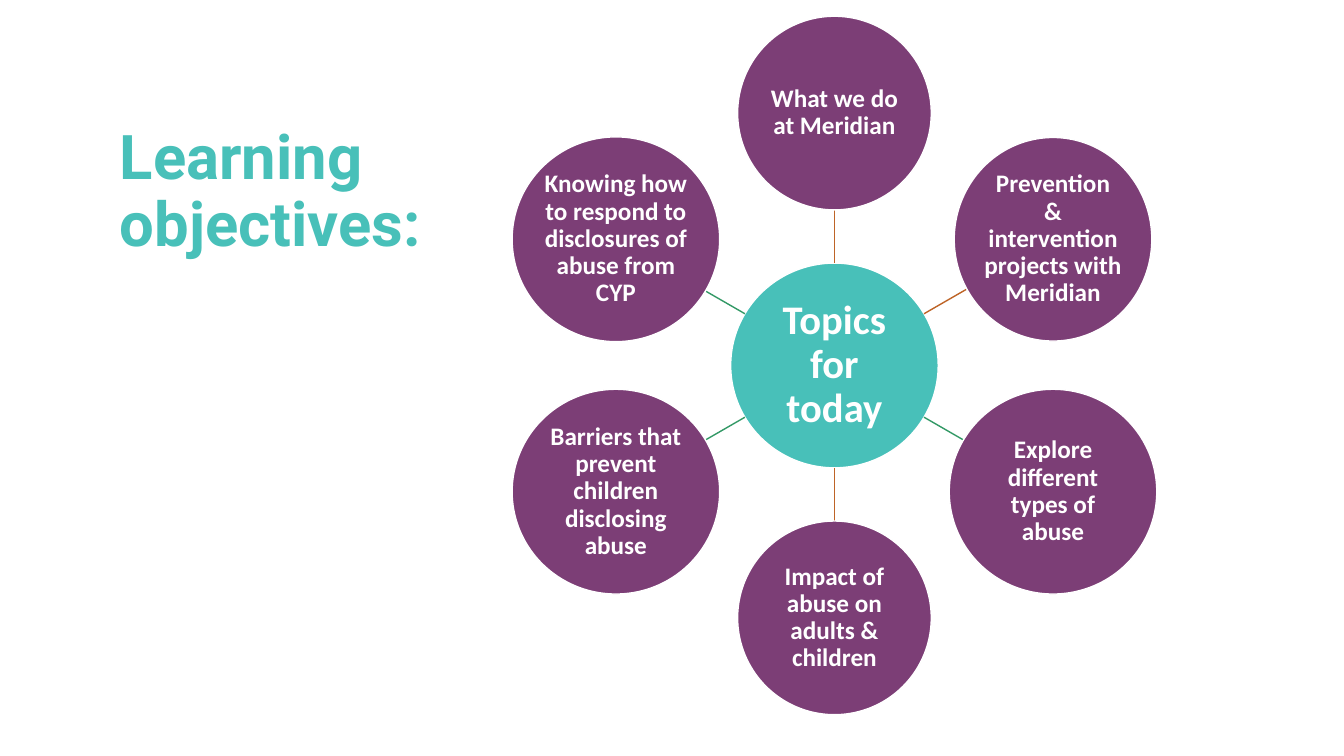
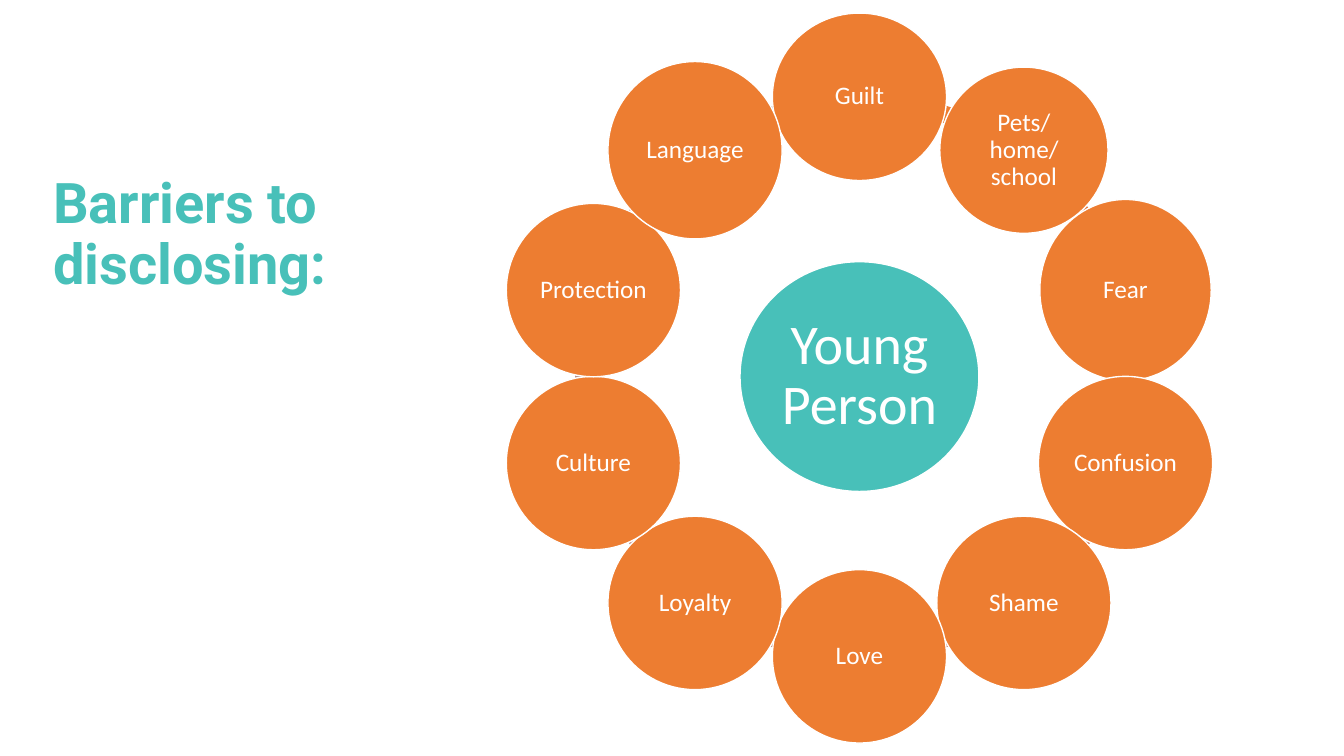
import math
import pptx
import pptx.util
import pptx.oxml.ns
import pptx.dml.color
import pptx.enum.shapes
import pptx.enum.text
import lxml.etree

Cm, Pt = pptx.util.Cm, pptx.util.Pt
RGB = pptx.dml.color.RGBColor
KIND = pptx.enum.shapes.MSO_SHAPE
ALIGN = pptx.enum.text.PP_ALIGN
ANCHOR = pptx.enum.text.MSO_ANCHOR

TEAL = RGB(0x48, 0xC0, 0xB9)
PLUM = RGB(0x7C, 0x3E, 0x76)
ORANGE = RGB(0xED, 0x7D, 0x31)
RUST = RGB(0xBE, 0x64, 0x27)
GREEN = RGB(0x33, 0x99, 0x66)
WHITE = RGB(0xFF, 0xFF, 0xFF)

# Content: satellites run clockwise from the top; lengths are in cm
SMALL, LARGE, PLAIN = (4.88, 4.88), (5.23, 5.16), (4.39, 4.37)

TOPICS = {
    "title": ("Learning\vobjectives:", (2.77, 3.07, 9.9, 5.92), 44),
    "mid": (21.03, 9.21), "reach": 6.36, "fill": PLUM, "bold": True, "pad": 0.03,
    "hub": ("Topics for today", LARGE, 29, 0.05),
    "nodes": [
        ("What we do at Meridian", SMALL),
        ("Prevention & intervention projects with Meridian", (4.98, 5.13)),
        ("Explore different types of abuse", LARGE),
        ("Impact of abuse on adults & children", SMALL),
        ("Barriers that prevent children disclosing abuse", LARGE),
        ("Knowing how to respond to disclosures of abuse from CYP", LARGE),
    ],
    "spokes": [RUST, RUST, GREEN, RUST, GREEN, GREEN],
}
BARRIERS = {
    "title": ("Barriers to disclosing:", (1.09, 4.29, 11.66, 9.14), 40),
    "mid": (21.66, 9.49), "reach": 7.05, "fill": ORANGE, "bold": False, "pad": 0.08,
    "hub": ("Young Person", (6.02, 5.79), 40, 0.15),
    "nodes": [
        ("Guilt", (4.39, 4.22)),
        ("Pets/home/school", (4.24, 4.19)),
        ("Fear", (4.32, 4.57)),
        ("Confusion", PLAIN),
        ("Shame", PLAIN),
        ("Love", PLAIN),
        ("Loyalty", PLAIN),
        ("Culture", PLAIN),
        ("Protection", PLAIN),
        ("Language", (4.39, 4.47)),
    ],
    # Ring segments, counter-clockwise, from the one that ends at the top
    "ring": ["A5A5A5", "AB9B9A", "B2928E", "B98A82", "C08376",
             "C87F69", "D17B5C", "DA7A4E", "E37A40", "ED7D31"],
}
RING = 14.33


def write(shape, text, size=18, font="Calibri", color=WHITE, bold=False,
          align=ALIGN.CENTER, anchor=ANCHOR.MIDDLE, pad=None):
    frame = shape.text_frame
    frame.word_wrap = True
    frame.vertical_anchor = anchor
    if pad is not None:
        frame.margin_left = frame.margin_right = Cm(pad)
        frame.margin_top = frame.margin_bottom = Cm(pad)
    frame.text = text
    para = frame.paragraphs[0]
    para.alignment = align
    para.line_spacing = 0.9
    for run in para.runs:
        run.font.name, run.font.size = font, Pt(size)
        run.font.bold, run.font.color.rgb = bold, color


def place(slide, kind, mid, dims, fill):
    """Add a filled shape centred on mid."""
    left, top = (m - d / 2 for m, d in zip(mid, dims))
    shape = slide.shapes.add_shape(kind, Cm(left), Cm(top), Cm(dims[0]), Cm(dims[1]))
    shape.shadow.inherit = False
    shape.fill.solid()
    shape.fill.fore_color.rgb = fill
    shape.line.fill.background()
    return shape


def disc(slide, mid, dims, fill, text, **style):
    shape = place(slide, KIND.OVAL, mid, dims, fill)
    shape.line.color.rgb = WHITE
    shape.line.width = Pt(1)
    write(shape, text, **style)


def edge(dims, ux, uy):
    """Distance from an ellipse's centre to its rim along (ux, uy)."""
    return 1 / math.hypot(2 * ux / dims[0], 2 * uy / dims[1])


def spoke(slide, start, end, color):
    line = slide.shapes.add_connector(
        pptx.enum.shapes.MSO_CONNECTOR.STRAIGHT, *(Cm(v) for v in start + end))
    line.line.color.rgb = color
    line.line.width = Pt(1)
    props = line._element.spPr
    lxml.etree.SubElement(props, pptx.oxml.ns.qn("a:effectLst"))


def wheel(deck, data):
    slide = deck.slides.add_slide(deck.slide_layouts[6])
    x, y = data["mid"]

    # Title
    text, box, size = data["title"]
    write(slide.shapes.add_textbox(*(Cm(v) for v in box)), text, size=size,
          font="Roboto", color=TEAL, bold=True, align=ALIGN.LEFT, anchor=ANCHOR.TOP)

    # Ring behind the discs; angle adjustments count 0.6 per degree
    ring = data.get("ring", [])
    for i, tint in enumerate(ring):
        step = 360 / len(ring)
        start = (270 - step * (i + 1)) % 360
        arc = place(slide, KIND.BLOCK_ARC, (x, y), (RING, RING), RGB.from_string(tint))
        for n, value in enumerate((start * 0.6, (start + step) % 360 * 0.6, 0.03)):
            arc.adjustments[n] = value

    # Hub
    label, hub, size, pad = data["hub"]
    disc(slide, (x, y), hub, TEAL, label, size=size, bold=data["bold"], pad=pad)

    # Satellites with their spokes
    nodes, reach = data["nodes"], data["reach"]
    spokes = data.get("spokes")
    for i, (label, dims) in enumerate(nodes):
        turn = 2 * math.pi * i / len(nodes)
        ux, uy = math.sin(turn), -math.cos(turn)
        if spokes:
            near, far = edge(hub, ux, uy), reach - edge(dims, ux, uy)
            spoke(slide, (x + near * ux, y + near * uy),
                  (x + far * ux, y + far * uy), spokes[i])
        disc(slide, (x + reach * ux, y + reach * uy), dims, data["fill"], label,
             bold=data["bold"], pad=data["pad"])


def main():
    deck = pptx.Presentation()
    deck.slide_width, deck.slide_height = Cm(33.87), Cm(19.05)
    for data in (TOPICS, BARRIERS):
        wheel(deck, data)
    deck.save("out.pptx")


if __name__ == "__main__":
    main()
